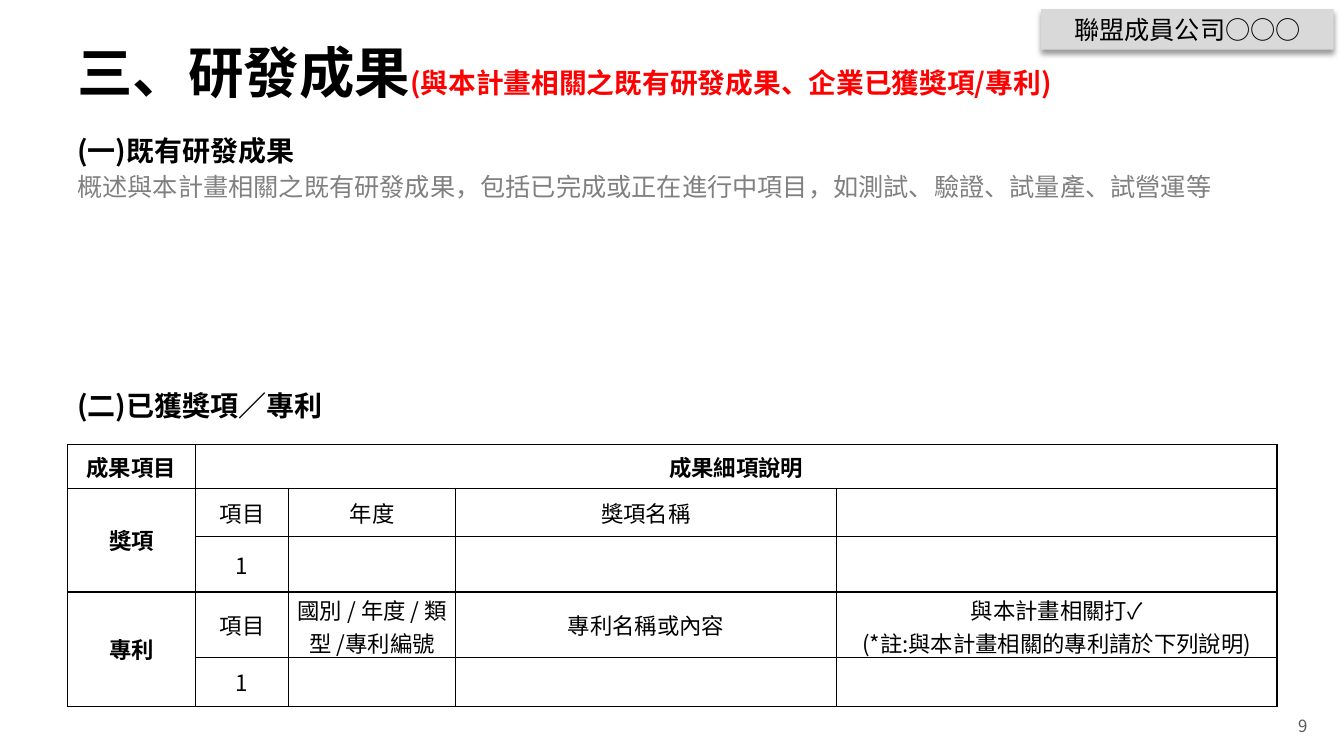
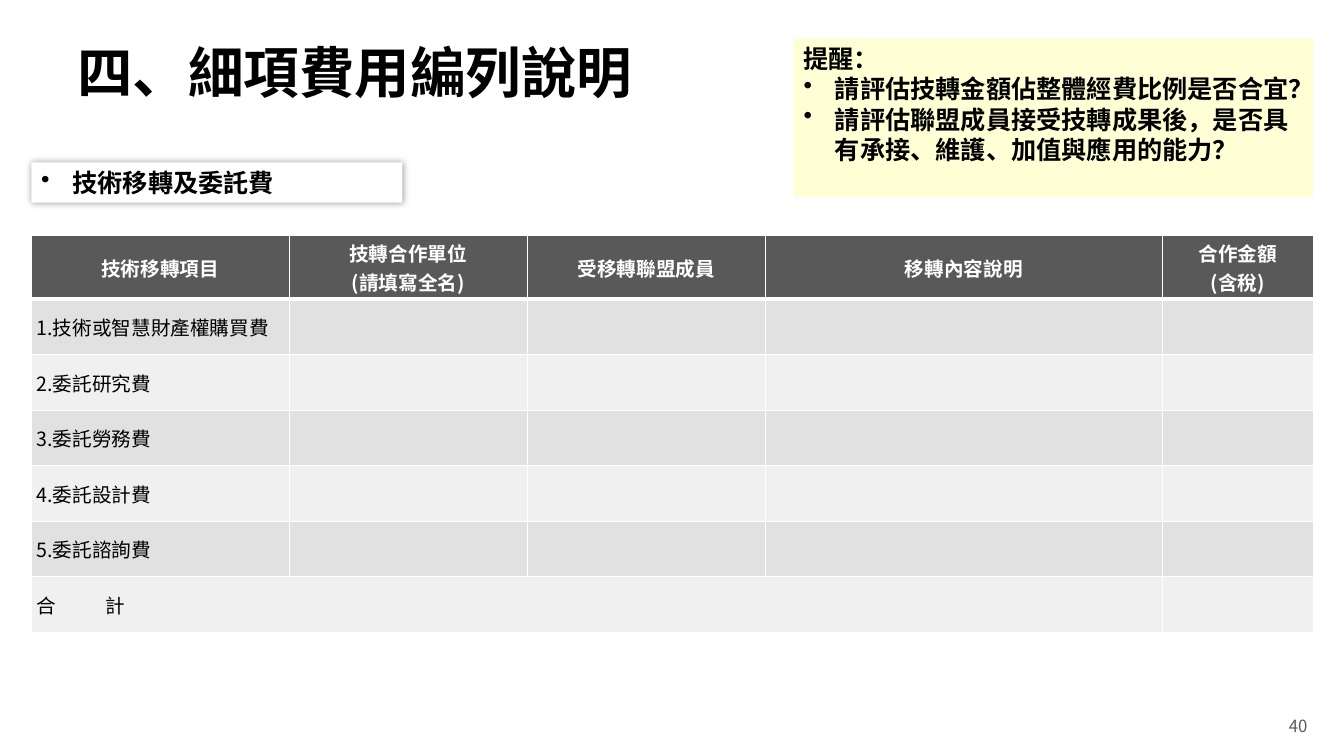
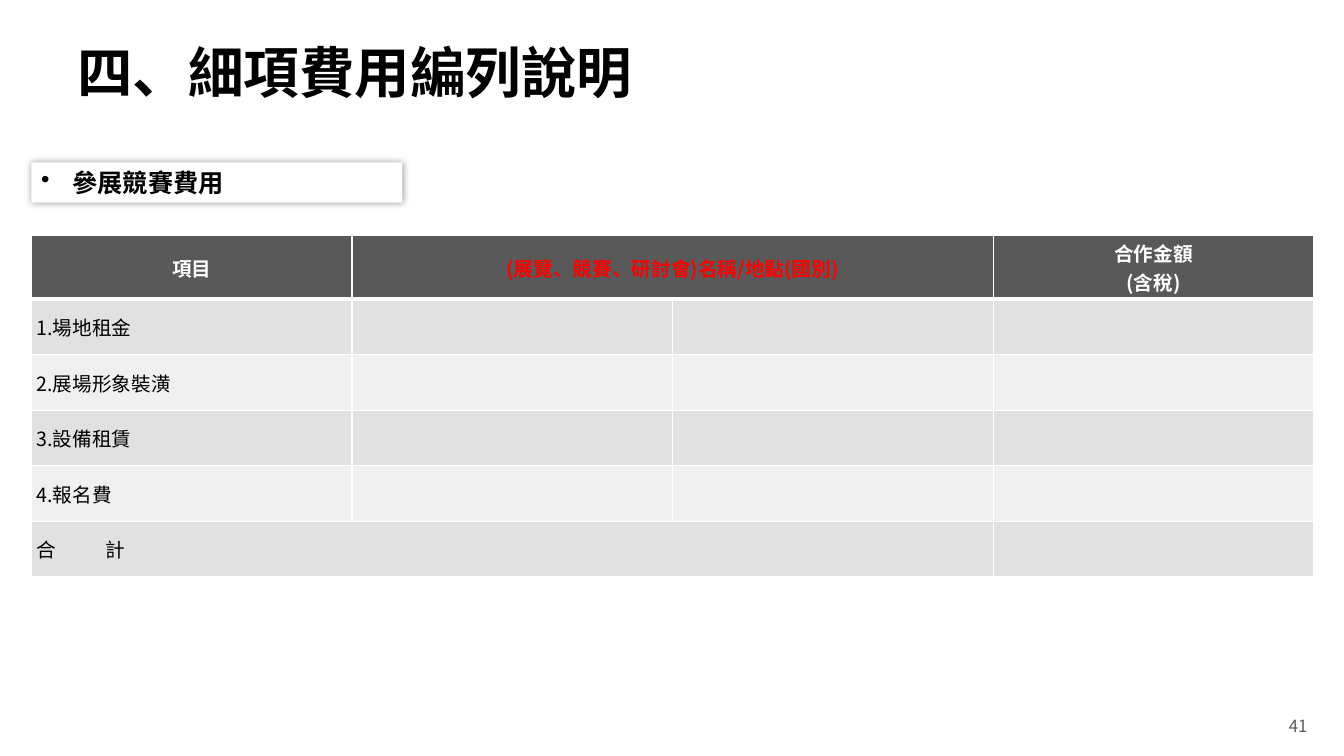
from lxml import etree
from pptx import Presentation
from pptx.dml.color import RGBColor
from pptx.enum import shapes, text
from pptx.oxml import ns
from pptx.util import Cm, Pt

INK = {"black": "000000", "white": "FFFFFF", "red": "FF0000", "gray": "808080",
       "dark": "595959", "tag": "D9D9D9", "note": "FFFFCC",
       "odd": "E1E1E1", "even": "F0F0F0"}
SANS, ALT = "Noto Sans CJK SC", "Noto Sans CJK JP"
ALIGN = {"l": text.PP_ALIGN.LEFT, "c": text.PP_ALIGN.CENTER,
         "r": text.PP_ALIGN.RIGHT, "j": text.PP_ALIGN.JUSTIFY}
MID, TOP = text.MSO_ANCHOR.MIDDLE, text.MSO_ANCHOR.TOP
LEFT, WIDE = 1.7, 30.48

HINT = "(與本計畫相關之既有研發成果、企業已獲獎項/專利)"
DONE = [("(一)既有研發成果", {"size": 20, "bold": True}),
        ("概述與本計畫相關之既有研發成果，包括已完成或正在進行中項目，如測試、驗證、試量產、試營運等",
         {"size": 18, "color": "gray"})]
PRIZE = [("(二)已獲獎項／專利", {"size": 20, "bold": True})]
AWARDS = [["成果項目", "成果細項說明", "", "", ""],
          ["獎項", "項目", "年度", "獎項名稱", ""],
          ["", "1", "", "", ""],
          ["專利", "項目", "國別 / 年度 / 類型 /專利編號", "專利名稱或內容",
           "與本計畫相關打✓\n(*註:與本計畫相關的專利請於下列說明)"],
          ["", "1", "", "", ""]]
TIPS = [("提醒：", {}),
        ("請評估技轉金額佔整體經費比例是否合宜？", {"bullet": True}),
        ("請評估聯盟成員接受技轉成果後，是否具有承接、維護、加值與應用的能力？", {"bullet": True})]
COSTS = [
    {"page": "40", "label": "技術移轉及委託費", "tips": TIPS,
     "cols": [6.5, 6, 6, 10, 3.81], "joins": [],
     "head": ["技術移轉項目", "技轉合作單位\n(請填寫全名)", "受移轉聯盟成員",
              "移轉內容說明", "合作金額\n(含稅)"],
     "items": ["技術或智慧財產權購買費", "委託研究費", "委託勞務費", "委託設計費", "委託諮詢費"]},
    {"page": "41", "label": "參展競賽費用", "tips": [],
     "cols": [8.08] * 4, "joins": [(0, 1, 0, 2)],
     "head": ["項目", "(展覽、競賽、研討會)名稱/地點(國別)", "", "合作金額\n(含稅)"],
     "items": ["場地租金", "展場形象裝潢", "設備租賃", "報名費"]},
]


def rgb(name):
    return RGBColor.from_string(INK[name])


def sub(root, tag, **attrs):
    node = etree.SubElement(root, ns.qn("a:" + tag))
    for key, val in attrs.items():
        node.set(key, str(val))
    return node


def write(frame, paras, anchor=TOP, **base):
    """Fill a frame; paras is a string or a list of (text, format) pairs."""
    if isinstance(paras, str):
        paras = [(line, {}) for line in paras.split("\n")]
    frame.word_wrap = True
    frame.vertical_anchor = anchor
    for i, (line, more) in enumerate(paras):
        fmt = {**base, **more}
        para = frame.paragraphs[0] if i == 0 else frame.add_paragraph()
        para.alignment = ALIGN[fmt.get("align", "l")]
        para.line_spacing = fmt.get("lead", 1.0)
        para.space_before = Pt(fmt.get("before", 0))
        props = para._p.get_or_add_pPr()
        if fmt.get("bullet"):
            props.set("marL", str(Cm(0.79)))
            props.set("indent", str(Cm(-0.79)))
            sub(props, "buChar", char="•")
        if "tab" in fmt:
            sub(sub(props, "tabLst"), "tab", pos=Cm(fmt["tab"]), algn="l")
        style(para.add_run() if line else para, line, **fmt)


def style(run, line, size=18, color="black", bold=False, face=SANS, **rest):
    """Set text and font of a run, or the font alone of an empty paragraph."""
    font = run.font
    if line:
        run.text = line
    font.size, font.bold, font.name = Pt(size), bold, face
    font.color.rgb = rgb(color)
    if line:
        sub(run._r.get_or_add_rPr(), "ea", typeface=face)


def note(slide, box, paras, **fmt):
    frame = slide.shapes.add_textbox(*map(Cm, box)).text_frame
    write(frame, paras, **fmt)


def panel(slide, box, paras, fill, alpha=100, shade=None, **fmt):
    """Filled rectangle; shade is (blur, distance, degrees)."""
    rect = slide.shapes.add_shape(shapes.MSO_SHAPE.RECTANGLE, *map(Cm, box))
    rect.shadow.inherit = False
    rect.fill.solid()
    rect.fill.fore_color.rgb = rgb(fill)
    rect.line.fill.background()
    props = rect._element.spPr
    if alpha < 100:
        sub(props.find(".//" + ns.qn("a:srgbClr")), "alpha", val=alpha * 1000)
    if shade:
        blur, dist, turn = shade
        cast = sub(props.find(ns.qn("a:effectLst")), "outerShdw", blurRad=Pt(blur),
                   dist=Pt(dist), dir=turn * 60000, algn="ctr", rotWithShape=0)
        sub(sub(cast, "srgbClr", val=INK["black"]), "alpha", val=40000)
    write(rect.text_frame, paras, **fmt)


def edge(cell, color, top=1, low=1):
    props = cell._tc.get_or_add_tcPr()
    for i, (side, width) in enumerate(zip("LRTB", (1, 1, top, low))):
        line = sub(props, "ln" + side, w=Pt(width))
        sub(sub(line, "solidFill"), "srgbClr", val=INK[color])
        props.insert(i, line)


def grid(slide, spot, cols, tall, rows, joins, look, pad):
    """Table; look(row, col) gives fill, border and text format of a cell."""
    size = (sum(cols), sum(tall))
    table = slide.shapes.add_table(len(tall), len(cols), *map(Cm, spot + size)).table
    table.first_row = table.horz_banding = False
    for col, width in zip(table.columns, cols):
        col.width = Cm(width)
    for row, height in zip(table.rows, tall):
        row.height = Cm(height)
    for r, row in enumerate(rows):
        for c, words in enumerate(row):
            cell = table.cell(r, c)
            fill, border, fmt = look(r, c)
            cell.fill.solid()
            cell.fill.fore_color.rgb = rgb(fill)
            edge(cell, **border)
            cell.margin_left = cell.margin_right = Cm(pad)
            cell.margin_top = cell.margin_bottom = Cm(0.05)
            cell.vertical_anchor = MID
            write(cell.text_frame, words, anchor=None, **fmt)
    for r, c, low, right in joins:
        table.cell(r, c).merge(table.cell(low, right))


def start(deck, title, page, hint=""):
    """New slide with its title and page number."""
    slide = deck.slides.add_slide(deck.slide_layouts[5])
    head = slide.shapes.title
    head.left, head.top, head.width, head.height = map(Cm, (LEFT, 0.97, WIDE, 1.85))
    write(head.text_frame, title, anchor=MID, size=39.6, bold=True, lead=0.9)
    if hint:
        style(head.text_frame.paragraphs[0].add_run(), hint,
              size=19.8, color="red", bold=True)
    note(slide, (25.58, 17.98, 7.62, 0.61), page, anchor=MID,
         size=12, color="dark", align="r")
    return slide


def award_look(r, c):
    bold = r == 0 or c == 0
    return "white", {"color": "black"}, {"size": 16, "bold": bold, "align": "c"}


def results(deck):
    slide = start(deck, "三、研發成果", "9", HINT)
    body = {"align": "j", "lead": 0.9, "before": 5}
    note(slide, (LEFT, 3.33, WIDE, 2.11), DONE, **body)
    note(slide, (LEFT, 9.75, WIDE, 1.24), PRIZE, **body)
    panel(slide, (26.24, 0.23, 7.37, 1.02), "聯盟成員公司○○○", "tag",
          shade=(4, 3, 90), anchor=MID, align="c", face=ALT)
    grid(slide, (LEFT, 11.2), [3.22, 2.36, 4.2, 9.6, 11.1],
         [1.1, 1.22, 1.4, 1.64, 1.24], AWARDS,
         [(0, 1, 0, 4), (1, 0, 2, 0), (3, 0, 4, 0)], award_look, 0.05)


def costs(deck, page, label, tips, cols, joins, head, items):
    slide = start(deck, "四、細項費用編列說明", page)
    panel(slide, (0.79, 4.09, 9.35, 1.02), label, "white", shade=(5, 0, 0),
          bold=True, bullet=True)
    blank = [""] * (len(cols) - 1)
    rows = [head]
    rows += [[f"{i}.{item}"] + blank for i, item in enumerate(items, 1)]
    rows += [["合\t計"] + blank]
    last = len(rows) - 1

    def look(r, c):
        if r == 0:
            color = "red" if "展覽" in head[c] else "white"
            return ("dark", {"color": "white", "low": 3},
                    {"size": 14, "bold": True, "align": "c", "color": color})
        fmt = {"size": 14, "tab": 1.74} if r == last else {"size": 14}
        return ("odd" if r % 2 else "even",
                {"color": "white", "top": 3 if r == 1 else 1}, fmt)

    grid(slide, (0.79, 5.94), cols, [1.6] + [1.4] * last, rows,
         joins + [(last, 0, last, len(cols) - 2)], look, 0.13)
    if tips:
        panel(slide, (20, 0.97, 13.1, 3.99), tips, "note", alpha=80, bold=True)


def main():
    deck = Presentation()
    deck.slide_width, deck.slide_height = Cm(33.87), Cm(19.05)
    results(deck)
    for cost in COSTS:
        costs(deck, **cost)
    deck.save("out.pptx")


if __name__ == "__main__":
    main()
